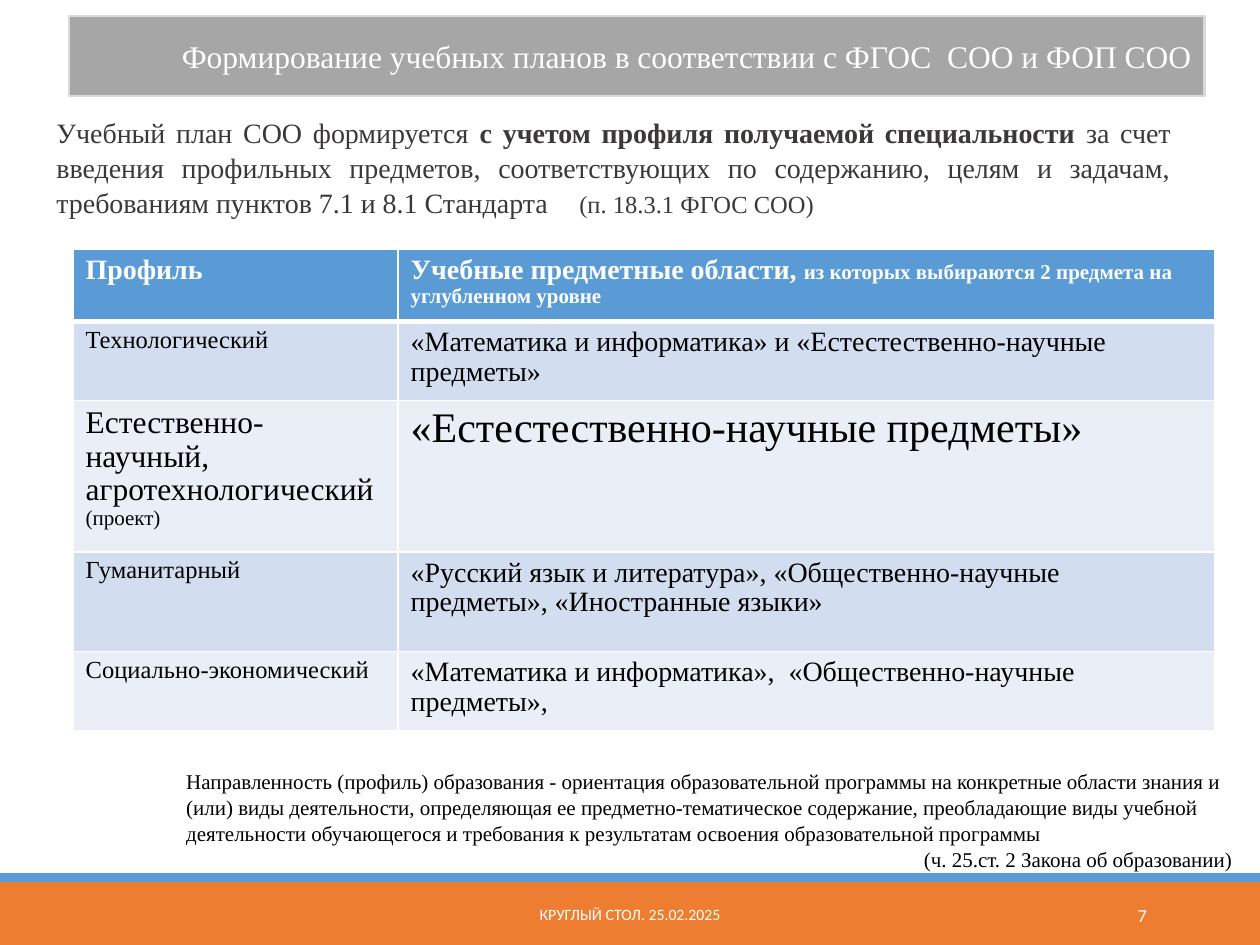
from typing import NamedTuple

from lxml.etree import SubElement
from pptx import Presentation
from pptx.dml.color import RGBColor
from pptx.enum.shapes import MSO_SHAPE as Shape
from pptx.enum.text import MSO_ANCHOR as Anchor, PP_ALIGN as Align
from pptx.oxml.ns import qn
from pptx.util import Inches, Pt

SERIF, SANS = "Times New Roman", "Calibri"
WHITE, BLACK, DARK = "FFFFFF", "000000", "3B3838"
BLUE, ORANGE, GREY, SILVER = "5B9BD5", "ED7D31", "A6A6A6", "D9D9D9"
BANDS = ("D2DEEF", "EAEFF7")


class Box(NamedTuple):
    left: float
    top: float
    width: float
    height: float

    def lengths(self):
        return [Inches(v) for v in self]


class Span(NamedTuple):
    text: str
    size: float
    bold: bool = False


class Profile(NamedTuple):
    name: list[Span]
    subjects: list[Span]
    height: float


ROWS = [
    Profile([Span("Профиль", 16, True)],
            [Span("Учебные предметные области, ", 16, True),
             Span("из которых выбираются 2 предмета на углубленном уровне", 12, True)], 0.57),
    Profile([Span("Технологический", 14)],
            [Span("«Математика и информатика» и «Естестественно-научные предметы»", 16)], 0.63),
    Profile([Span("Естественно-научный, агротехнологический ", 18), Span("(проект)", 12)],
            [Span("«Естестественно-научные предметы»", 24)], 1.2),
    Profile([Span("Гуманитарный", 14)],
            [Span("«Русский язык и литература», «Общественно-научные предметы», "
                  "«Иностранные языки»", 16)], 0.79),
    Profile([Span("Социально-экономический", 14)],
            [Span("«Математика и информатика»,  «Общественно-научные предметы»,", 16)], 0.63),
]


def rgb(color: str) -> RGBColor:
    return RGBColor.from_string(color)


def write(p, spans: list[Span], color: str, font: str = SERIF,
          align=Align.LEFT, spacing: float = 1.0) -> None:
    p.alignment = align
    p.line_spacing = spacing
    for span in spans:
        r = p.add_run()
        r.text = span.text
        r.font.name = font
        r.font.size = Pt(span.size)
        r.font.bold = span.bold
        r.font.color.rgb = rgb(color)


def add_bar(s, box: Box, color: str, line: str | None = None):
    sp = s.shapes.add_shape(Shape.RECTANGLE, *box.lengths())
    sp.shadow.inherit = False
    sp.fill.solid()
    sp.fill.fore_color.rgb = rgb(color)
    if line:
        sp.line.color.rgb = rgb(line)
        sp.line.width = Pt(1.25)
    else:
        sp.line.fill.background()
    return sp


def add_text(s, box: Box, anchor=Anchor.TOP):
    tf = s.shapes.add_textbox(*box.lengths()).text_frame
    tf.word_wrap = True
    tf.vertical_anchor = anchor
    return tf


def add_tab_stop(p, position: float) -> None:
    tabs = SubElement(p._p.get_or_add_pPr(), qn("a:tabLst"))
    SubElement(tabs, qn("a:tab"), pos=str(Inches(position)), algn="l")


def set_borders(cell, bottom: float) -> None:
    """Draw white cell borders; call before filling the cell."""
    tc_pr = cell._tc.get_or_add_tcPr()
    for side, width in zip("LRTB", (1, 1, 1, bottom)):
        ln = SubElement(tc_pr, qn(f"a:ln{side}"), w=str(Pt(width)))
        fill = SubElement(ln, qn("a:solidFill"))
        SubElement(fill, qn("a:srgbClr"), val=WHITE)


def add_profile_table(s, box: Box, widths: tuple[float, ...]) -> None:
    table = s.shapes.add_table(len(ROWS), len(widths), *box.lengths()).table
    for column, width in zip(table.columns, widths):
        column.width = Inches(width)
    for i, row in enumerate(ROWS):
        header = i == 0
        table.rows[i].height = Inches(row.height)
        for j, spans in enumerate((row.name, row.subjects)):
            cell = table.cell(i, j)
            set_borders(cell, 3 if header else 1)
            cell.fill.solid()
            cell.fill.fore_color.rgb = rgb(BLUE if header else BANDS[(i - 1) % 2])
            write(cell.text_frame.paragraphs[0], spans,
                  WHITE if header else BLACK, spacing=0.96)


def main() -> None:
    prs = Presentation()
    prs.slide_width, prs.slide_height = Inches(10), Inches(7.5)
    s = prs.slides.add_slide(prs.slide_layouts[6])

    add_bar(s, Box(0, 7, 10, 0.5), ORANGE)
    add_bar(s, Box(0, 6.93, 10, 0.07), BLUE)

    title = add_bar(s, Box(0.55, 0.13, 9.01, 0.63), GREY, SILVER).text_frame
    title.word_wrap = True
    title.vertical_anchor = Anchor.MIDDLE
    write(title.paragraphs[0],
          [Span("Формирование учебных планов в соответствии с ФГОС  СОО и ФОП СОО", 18)],
          WHITE, align=Align.RIGHT)

    intro = add_text(s, Box(0.35, 0.86, 9.04, 0.91)).paragraphs[0]
    write(intro, [
        Span("Учебный план СОО формируется ", 16),
        Span("с учетом профиля получаемой специальности ", 16, True),
        Span("за счет введения профильных предметов, соответствующих по содержанию, "
             "целям и задачам, требованиям пунктов 7.1 и 8.1 Стандарта", 16),
        Span("\t(п. 18.3.1 ФГОС СОО)", 14),
    ], DARK, align=Align.JUSTIFY, spacing=1.04)
    add_tab_stop(intro, 4.15)

    add_profile_table(s, Box(0.58, 1.98, 9.06, 3.82), (2.58, 6.48))

    note = add_text(s, Box(1.38, 6.04, 8.5, 0.91))
    write(note.paragraphs[0], [Span(
        "Направленность (профиль) образования - ориентация образовательной программы "
        "на конкретные области знания и (или) виды деятельности, определяющая ее "
        "предметно-тематическое содержание, преобладающие виды учебной деятельности "
        "обучающегося и требования к результатам освоения образовательной программы", 12)],
        BLACK, spacing=1.04)
    write(note.add_paragraph(), [Span("(ч. 25.ст. 2 Закона об образовании)", 12)],
          BLACK, align=Align.RIGHT, spacing=1.04)

    footer = add_text(s, Box(3.02, 7.06, 3.96, 0.4), Anchor.MIDDLE)
    write(footer.paragraphs[0], [Span("КРУГЛЫЙ СТОЛ. 25.02.2025", 9)],
          WHITE, SANS, Align.CENTER)
    number = add_text(s, Box(8.12, 7.06, 1.08, 0.4), Anchor.MIDDLE)
    write(number.paragraphs[0], [Span("7", 10.5)], WHITE, SANS, Align.RIGHT)

    prs.save("out.pptx")


if __name__ == "__main__":
    main()
